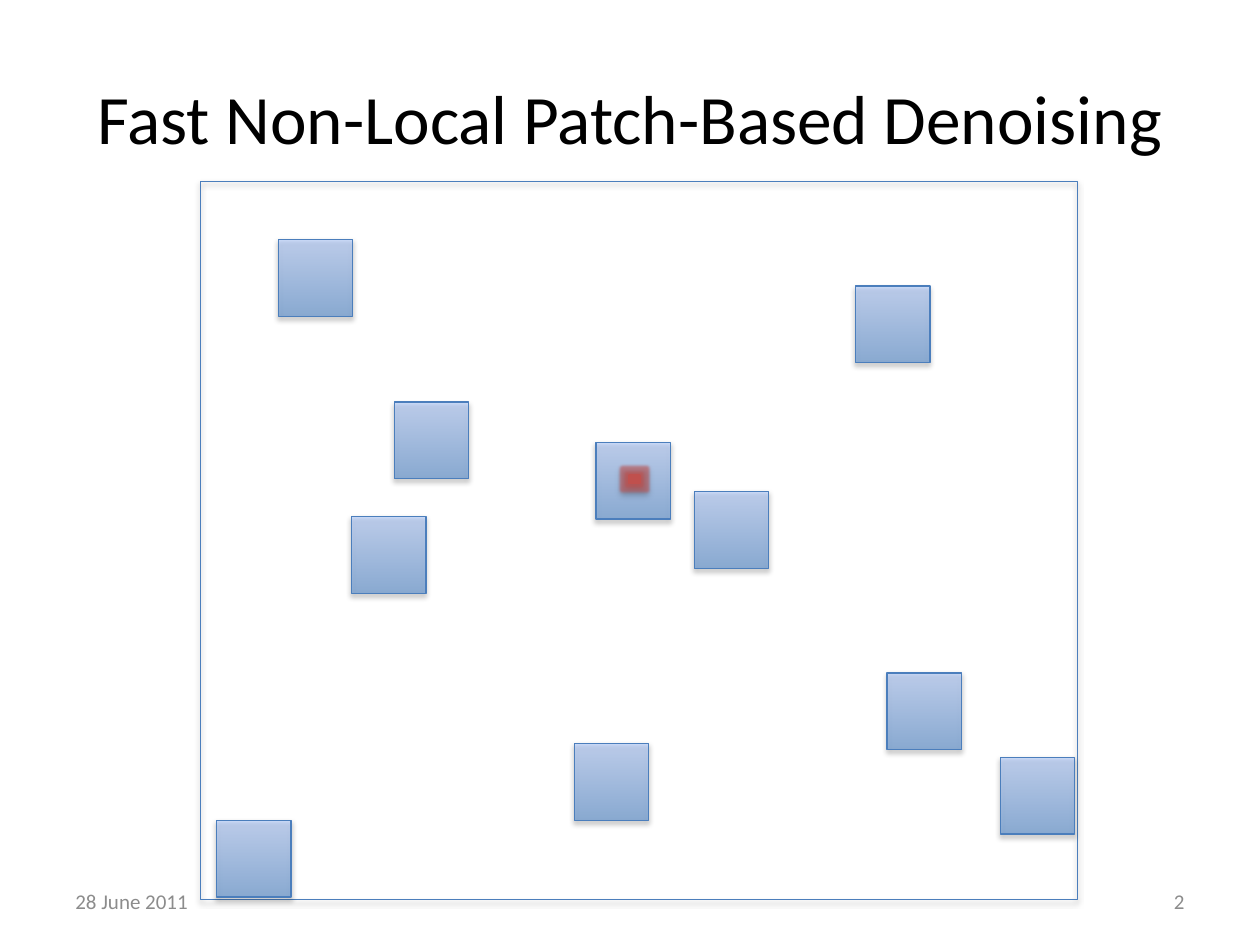
from dataclasses import dataclass

from lxml.etree import SubElement
from pptx import Presentation
from pptx.dml.color import RGBColor
from pptx.enum.shapes import MSO_SHAPE
from pptx.enum.text import MSO_ANCHOR, PP_ALIGN
from pptx.oxml.ns import qn
from pptx.util import Inches, Pt


@dataclass(frozen=True)
class Theme:
    font: str = "Calibri"
    title_size: float = 39.6
    footer_size: float = 12
    title_color: str = "000000"
    footer_color: str = "8C8C8C"
    outline: str = "4B7EBC"
    gradient: tuple = ("3F80CE", "A4C4FF")
    gradient_opacity: int = 49
    pixel: str = "C0504D"
    shadow: str = "000000"


PATCH_SIZE = (0.59, 0.61)
# Left and top of each patch; the first surrounds the pixel being denoised
PATCHES = [
    (4.73, 3.51), (2.21, 1.9), (3.13, 3.19), (2.79, 4.1), (6.79, 2.27),
    (7.94, 6.01), (7.04, 5.34), (5.51, 3.9), (4.56, 5.9), (1.72, 6.51),
]


class SlideBuilder:
    def __init__(self, slide, theme):
        self.slide = slide
        self.theme = theme

    def format_text(self, shape, text, size, color, align):
        frame = shape.text_frame
        frame.text = text
        frame.word_wrap = True
        frame.vertical_anchor = MSO_ANCHOR.MIDDLE
        paragraph = frame.paragraphs[0]
        paragraph.alignment = align
        font = paragraph.runs[0].font
        font.name = self.theme.font
        font.size = Pt(size)
        font.color.rgb = RGBColor.from_string(color)

    def title(self, text, left, top, width, height):
        title = self.slide.shapes.title
        title.left, title.top = Inches(left), Inches(top)
        title.width, title.height = Inches(width), Inches(height)
        self.format_text(title, text, self.theme.title_size,
                         self.theme.title_color, PP_ALIGN.CENTER)

    def footer(self, text, left, align):
        box = self.slide.shapes.add_textbox(
            Inches(left), Inches(6.95), Inches(2.33), Inches(0.4))
        self.format_text(box, text, self.theme.footer_size,
                         self.theme.footer_color, align)

    def effect(self, shape, tag, color, opacity, **attributes):
        effects = shape._element.spPr.find(qn("a:effectLst"))
        effect = SubElement(effects, qn(tag), attributes)
        color_element = SubElement(effect, qn("a:srgbClr"), val=color)
        SubElement(color_element, qn("a:alpha"), val=str(opacity * 1000))

    def rectangle(self, left, top, width, height, line, line_width=0.75, glow=None):
        shape = self.slide.shapes.add_shape(
            MSO_SHAPE.RECTANGLE, Inches(left), Inches(top),
            Inches(width), Inches(height))
        shape.fill.background()
        shape.line.color.rgb = RGBColor.from_string(line)
        shape.line.width = Pt(line_width)
        shape.shadow.inherit = False
        if glow:
            self.effect(shape, "a:glow", glow, 60, rad=str(Pt(3)))
        self.effect(shape, "a:outerShdw", self.theme.shadow, 35,
                    blurRad=str(Pt(3.1)), dist=str(Pt(1.8)),
                    dir="5400000", rotWithShape="0")
        return shape

    def patch(self, left, top):
        shape = self.rectangle(left, top, *PATCH_SIZE, self.theme.outline)
        shape.fill.gradient()
        shape.fill.gradient_angle = 90
        for stop, color in zip(shape.fill.gradient_stops, self.theme.gradient):
            stop.color.rgb = RGBColor.from_string(color)
        for color_element in shape._element.spPr.iterfind(
                f"{qn('a:gradFill')}//{qn('a:srgbClr')}"):
            SubElement(color_element, qn("a:alpha"),
                       val=str(self.theme.gradient_opacity * 1000))

    def pixel(self, left, top, width, height):
        color = self.theme.pixel
        shape = self.rectangle(left, top, width, height, color, 2.25, glow=color)
        shape.fill.solid()
        shape.fill.fore_color.rgb = RGBColor.from_string(color)


def main():
    presentation = Presentation()
    presentation.slide_width = Inches(10)
    presentation.slide_height = Inches(7.5)
    slide = presentation.slides.add_slide(presentation.slide_layouts[5])
    theme = Theme()
    builder = SlideBuilder(slide, theme)

    # Title and footer
    builder.title("Fast Non-Local Patch-Based Denoising", 0.5, 0.3, 9, 1.25)
    builder.footer("28 June 2011", 0.5, PP_ALIGN.LEFT)
    builder.footer("2", 7.17, PP_ALIGN.RIGHT)

    # Image frame with its patches
    builder.rectangle(1.59, 1.44, 6.96, 5.7, theme.outline)
    for left, top in PATCHES:
        builder.patch(left, top)

    # Pixel at the centre of the reference patch
    builder.pixel(5, 3.78, 0.07, 0.05)

    presentation.save("out.pptx")


if __name__ == "__main__":
    main()
